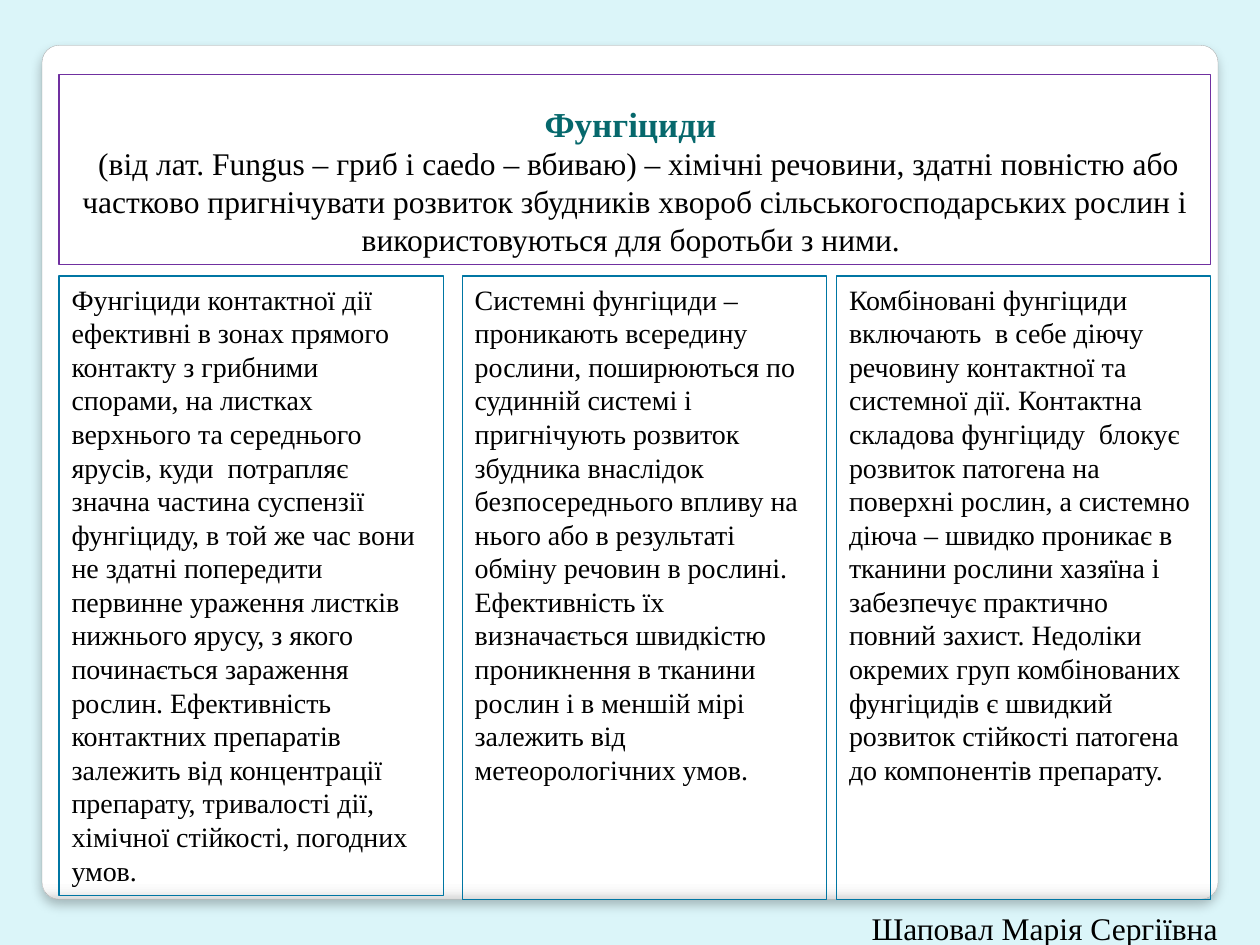
from lxml import etree
from pptx import Presentation
from pptx.dml.color import RGBColor
from pptx.enum.shapes import MSO_SHAPE
from pptx.enum.text import MSO_ANCHOR, PP_ALIGN
from pptx.oxml import parse_xml
from pptx.oxml.ns import nsdecls, qn
from pptx.util import Pt

RECTANGLE = MSO_SHAPE.RECTANGLE
ROUNDED = MSO_SHAPE.ROUNDED_RECTANGLE
LEFT, CENTER, RIGHT = PP_ALIGN.LEFT, PP_ALIGN.CENTER, PP_ALIGN.RIGHT
TOP, MIDDLE = MSO_ANCHOR.TOP, MSO_ANCHOR.MIDDLE

PALE_AQUA = RGBColor(0xDB, 0xF5, 0xF9)
CARD_EDGE = RGBColor(0xA4, 0xA4, 0xA4)
PURPLE = RGBColor(0x70, 0x30, 0xA0)
BLUE = RGBColor(0x00, 0x76, 0xA3)
TEAL = RGBColor(0x06, 0x68, 0x6C)
BLACK = RGBColor(0, 0, 0)
FONT = "Times New Roman"
CARD_STOPS = [(0, "FFFFFF"), (98, "FFFFFF"), (99, "F7F7F7"), (100, "DADADA")]

COLUMN_TOP = 157.7
COLUMNS = [
    (33.8, 219.6, 354.2,
     "Фунгіциди контактної дії ефективні в зонах прямого контакту з грибними "
     "спорами, на листках верхнього та середнього ярусів, куди  потрапляє значна "
     "частина суспензії фунгіциду, в той же час вони не здатні попередити первинне "
     "ураження листків нижнього ярусу, з якого починається зараження рослин. "
     "Ефективність контактних препаратів залежить від концентрації  препарату, "
     "тривалості дії, хімічної стійкості, погодних умов."),
    (264.2, 208.1, 356.2,
     "Системні фунгіциди – проникають всередину рослини, поширюються по судинній "
     "системі і пригнічують розвиток збудника внаслідок безпосереднього впливу на "
     "нього або в результаті обміну речовин в рослині. Ефективність їх визначається "
     "швидкістю проникнення в тканини рослин і в меншій мірі залежить від "
     "метеорологічних умов."),
    (478.1, 213.8, 356.2,
     "Комбіновані фунгіциди включають  в себе діючу речовину контактної та "
     "системної дії. Контактна складова фунгіциду  блокує розвиток патогена на "
     "поверхні рослин, а системно діюча – швидко проникає в тканини рослини хазяїна "
     "і забезпечує практично повний захист. Недоліки окремих груп комбінованих "
     "фунгіцидів є швидкий розвиток стійкості патогена до компонентів препарату."),
]


def add_frame(left, top, width, height, line_color, anchor):
    """Add an unfilled, outlined rectangle and return its text frame."""
    frame = slide.shapes.add_shape(RECTANGLE, Pt(left), Pt(top), Pt(width), Pt(height))
    frame.shadow.inherit = False
    frame.fill.background()
    frame.line.color.rgb = line_color
    frame.line.width = Pt(0.75)
    frame.text_frame.word_wrap = True
    frame.text_frame.vertical_anchor = anchor
    return frame.text_frame


def write(paragraph, text, size, align, color=BLACK, bold=False):
    paragraph.text = text
    paragraph.alignment = align
    font = paragraph.runs[0].font
    font.name = FONT
    font.size = Pt(size)
    font.bold = bold
    font.color.rgb = color


prs = Presentation()
prs.slide_width, prs.slide_height = Pt(720), Pt(540)
slide = prs.slides.add_slide(prs.slide_layouts[6])
slide.background.fill.solid()
slide.background.fill.fore_color.rgb = PALE_AQUA

# White card with a shaded lower edge and a soft shadow
card = slide.shapes.add_shape(ROUNDED, Pt(24), Pt(25.9), Pt(672), Pt(488))
card.adjustments[0] = 0.02
card.line.color.rgb = CARD_EDGE
card.line.width = Pt(0.16)
card.fill.gradient()
card.fill.gradient_angle = 270
card_properties = card.element.spPr
stop_list = card_properties.find(".//" + qn("a:gsLst"))
for default_stop in list(stop_list):
    stop_list.remove(default_stop)
for percent, color in CARD_STOPS:
    stop = etree.SubElement(stop_list, qn("a:gs"), pos=str(percent * 1000))
    etree.SubElement(stop, qn("a:srgbClr"), val=color)
card.shadow.inherit = False
card_properties.find(qn("a:effectLst")).append(parse_xml(
    f'<a:outerShdw {nsdecls("a")} blurRad="{Pt(6)}" dist="{Pt(4)}" dir="5400000" '
    'algn="t" rotWithShape="0"><a:srgbClr val="000000"><a:alpha val="25000"/>'
    '</a:srgbClr></a:outerShdw>'))

# Definition
definition = add_frame(33.8, 42.5, 658.1, 108.7, PURPLE, MIDDLE)
term = definition.paragraphs[0]
write(term, "Фунгіциди ", 20, CENTER, TEAL, True)
term.line_spacing = 1.5
write(definition.add_paragraph(),
      " (від лат. Fungus – гриб і caedo – вбиваю) – хімічні речовини, здатні "
      "повністю або частково пригнічувати розвиток збудників хвороб "
      "сільськогосподарських рослин і використовуються для боротьби з ними. ",
      18, CENTER)

# Three kinds of fungicide
for left, width, height, description in COLUMNS:
    column = add_frame(left, COLUMN_TOP, width, height, BLUE, TOP)
    write(column.paragraphs[0], description, 16, LEFT)

# Author
author = slide.shapes.add_textbox(Pt(460), Pt(516), Pt(243), Pt(24)).text_frame
author.word_wrap = True
write(author.paragraphs[0], "Шаповал Марія Сергіївна", 18, RIGHT)

prs.save("out.pptx")
